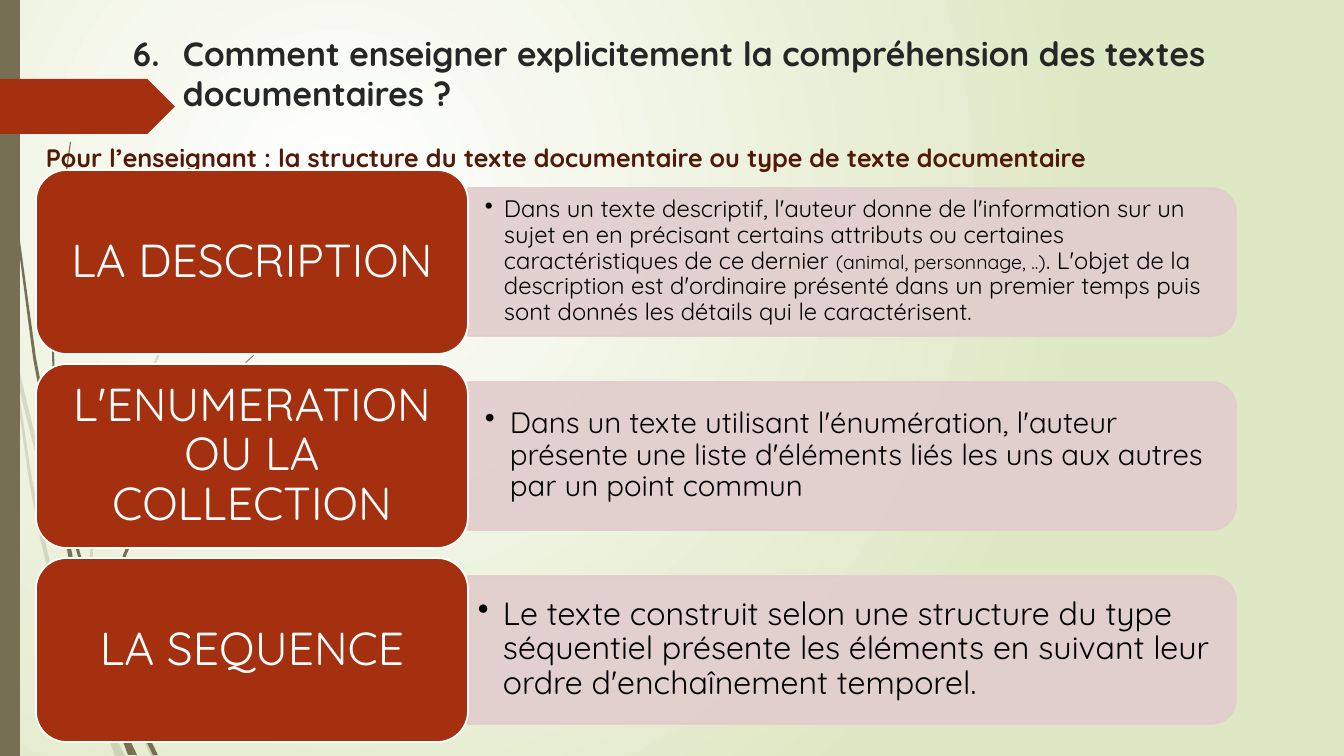
from dataclasses import dataclass

from lxml import etree
from pptx import Presentation
from pptx.dml.color import RGBColor
from pptx.enum import shapes, text
from pptx.oxml import ns
from pptx.util import Pt

WIDE, HIGH = 1344, 756
SCALE = 12192000 / WIDE


@dataclass(frozen=True)
class Theme:
    font: str = "Quicksand"
    olive: str = "766F54"
    rust: str = "A53010"
    rose: str = "E1CDCC"
    white: str = "FFFFFF"
    lime: str = "DFE8C4"
    ink: str = "262626"
    maroon: str = "521808"
    black: str = "000000"
    title: int = 24
    lead: int = 18
    label: int = 33
    edge: float = 1.25


THEME = Theme()

PALE = [
    [(11, 353), (9, 325), (0, 284), (0, 301), (10, 347)],
    [(58, 526), (85, 604), (86, 591), (62, 524), (43, 467), (28, 407),
     (14, 348), (17, 379), (29, 428), (42, 478)],
    [(93, 612), (89, 601), (89, 615), (124, 700), (151, 756), (156, 756),
     (128, 698)],
    [(120, 756), (125, 756), (106, 717)],
    [(94, 688), (71, 624), (53, 575), (41, 524), (31, 473), (17, 379),
     (11, 353), (28, 474), (37, 525), (49, 576), (66, 626), (93, 699),
     (102, 720), (100, 713)],
    [(89, 589), (96, 526), (111, 466), (161, 352), (231, 247), (270, 200),
     (292, 176), (314, 155), (314, 154), (291, 176), (270, 199), (230, 246),
     (159, 351), (108, 465), (93, 526), (86, 589), (86, 591), (89, 601)],
    [(102, 720), (115, 756), (120, 756)],
    [(97, 698), (94, 688), (100, 713), (102, 720), (120, 756), (106, 717)],
]
DARK = [
    [(7, 111), (17, 235), (33, 358), (56, 481), (57, 485), (55, 461),
     (55, 457), (36, 358), (19, 234), (8, 110), (5, 48), (4, 0), (3, 0),
     (4, 48)],
    [(89, 597), (107, 650), (107, 638), (107, 636), (94, 595), (81, 556),
     (70, 516), (60, 476), (65, 509)],
    [(114, 654), (111, 646), (112, 661), (133, 714), (153, 755), (158, 755),
     (137, 712)],
    [(111, 697), (99, 662), (73, 560), (65, 509), (57, 481), (69, 561),
     (94, 664), (112, 714), (118, 728), (117, 723)],
    [(60, 476), (58, 457), (54, 352), (58, 247), (64, 195), (71, 142),
     (70, 142), (62, 195), (56, 247), (52, 352), (55, 453)],
    [(134, 755), (137, 755), (123, 725)],
    [(112, 638), (126, 556), (159, 480), (207, 409), (233, 377), (247, 362),
     (263, 347), (262, 347), (247, 361), (233, 376), (206, 408), (157, 478),
     (123, 555), (107, 636), (111, 646)],
    [(118, 728), (128, 755), (132, 755)],
    [(117, 712), (111, 697), (117, 723), (118, 728), (131, 755), (134, 755),
     (123, 725)],
]

# Label, runs of the note with sizes, hanging indent, side inset, top inset
ROWS = [
    ("LA DESCRIPTION", [
        ("Dans un texte descriptif, l'auteur donne de l'information sur un "
         "sujet en en précisant certains attributs ou certaines "
         "caractéristiques de ce dernier ", 17),
        ("(animal, personnage, ..)", 14),
        (". L'objet de la description est d'ordinaire présenté dans un "
         "premier temps puis sont donnés les détails qui le caractérisent.",
         17)], 19, 17, 9),
    ("L'ENUMERATION OU LA COLLECTION", [
        ("Dans un texte utilisant l'énumération, l'auteur présente une liste "
         "d'éléments liés les uns aux autres par un point commun", 21)],
     25, 17, 9),
    ("LA SEQUENCE", [
        ("Le texte construit selon une structure du type séquentiel présente "
         "les éléments en suivant leur ordre d'enchaînement temporel.", 23)],
     25, 10, 5),
]


def px(n):
    return round(n * SCALE)


def rgb(code):
    return RGBColor.from_string(code)


def paint(shape, fill, line=None, alpha=100):
    shape.shadow.inherit = False
    shape.fill.solid()
    shape.fill.fore_color.rgb = rgb(fill)
    if line:
        shape.line.color.rgb = rgb(line)
        shape.line.width = Pt(THEME.edge)
    else:
        shape.line.fill.background()
    if alpha < 100:
        for tint in shape._element.spPr.iter(ns.qn("a:srgbClr")):
            etree.SubElement(tint, ns.qn("a:alpha"), val=str(alpha * 1000))


def block(slide, kind, box, *look):
    shape = slide.shapes.add_shape(kind, *map(px, box))
    paint(shape, *look)
    return shape


def place(shape, box):
    shape.left, shape.top, shape.width, shape.height = map(px, box)


def frame(shape, side, top, anchor):
    area = shape.text_frame
    area.word_wrap = True
    area.auto_size = text.MSO_AUTO_SIZE.NONE
    area.vertical_anchor = anchor
    area.margin_left = area.margin_right = px(side)
    area.margin_top = area.margin_bottom = px(top)
    return area.paragraphs[0]


def write(para, words, size, color, bold=False):
    run = para.add_run()
    run.text = words
    run.font.name = THEME.font
    run.font.size = Pt(size)
    run.font.bold = bold
    run.font.color.rgb = rgb(color)


def hang(para, indent, tag, **attrs):
    """Set the hanging indent and the bullet element of a paragraph."""
    props = para._p.get_or_add_pPr()
    props.set("marL", str(px(indent)))
    props.set("indent", str(-px(indent)))
    etree.SubElement(props, ns.qn(tag), **attrs)


def backdrop(slide):
    fill = slide.background.fill
    fill.gradient()
    for stop, code in zip(fill.gradient_stops, (THEME.white, THEME.lime)):
        stop.color.rgb = rgb(code)
    fill.gradient_stops[0].position = 0
    fill.gradient_stops[1].position = 1
    line = next(slide._element.iter(ns.qn("a:lin")))
    ring = etree.Element(ns.qn("a:path"))
    ring.set("path", "circle")
    etree.SubElement(ring, ns.qn("a:fillToRect"), l="50000", t="50000",
                     r="100000", b="100000")
    line.getparent().replace(line, ring)


def margin(slide):
    """Draw the grass blades, the side bar and the arrow tab."""
    for blades, alpha in ((PALE, 20), (DARK, 100)):
        for first, *rest in blades:
            pen = slide.shapes.build_freeform(*first, scale=SCALE)
            pen.add_line_segments(rest, close=True)
            paint(pen.convert_to_shape(), THEME.olive, None, alpha)
    kinds = shapes.MSO_SHAPE
    block(slide, kinds.RECTANGLE, (0, 0, 20, HIGH), THEME.olive)
    block(slide, kinds.PENTAGON, (0, 79, 175, 55), THEME.rust)


def heading(slide, box):
    title = slide.shapes.title
    slide.shapes._spTree.append(title._element)
    place(title, box)
    para = frame(title, 10, 5, text.MSO_ANCHOR.TOP)
    para.alignment = text.PP_ALIGN.LEFT
    hang(para, 50, "a:buAutoNum", type="arabicPeriod", startAt="6")
    write(para, "Comment enseigner explicitement la compréhension des textes "
          "documentaires ?", THEME.title, THEME.ink, True)


def lead(slide, box):
    body = slide.placeholders[1]
    slide.shapes._spTree.append(body._element)
    place(body, box)
    para = frame(body, 10, 49, text.MSO_ANCHOR.TOP)
    para.space_before = Pt(0)
    hang(para, 0, "a:buNone")
    write(para, "Pour l’enseignant : la structure du texte documentaire ou "
          "type de texte documentaire", THEME.lead, THEME.maroon, True)


def row(slide, box, label, runs, indent, side, top):
    """Draw a label card with its note panel on the right."""
    left, y, width, height = box
    card, deep, middle = 432, 148, y + height // 2
    long = width - card
    panel = block(slide, shapes.MSO_SHAPE.ROUND_2_SAME_RECTANGLE,
                  (left + card + (long - deep) // 2, middle - long // 2,
                   deep, long), THEME.rose, THEME.rose, 90)
    panel.rotation = 90

    note = slide.shapes.add_textbox(
        *map(px, (left + card, middle - 67, long - 7, 133)))
    para = frame(note, side, top, text.MSO_ANCHOR.MIDDLE)
    para.line_spacing = 0.9
    hang(para, indent, "a:buChar", char="•")
    for words, size in runs:
        write(para, words, size, THEME.black)

    tile = block(slide, shapes.MSO_SHAPE.ROUNDED_RECTANGLE,
                 (left, y, card, height), THEME.rust, THEME.white)
    para = frame(tile, 14, 7, text.MSO_ANCHOR.MIDDLE)
    para.alignment = text.PP_ALIGN.CENTER
    para.line_spacing = 0.9
    write(para, label, THEME.label, THEME.white)


def main():
    deck = Presentation()
    deck.slide_width, deck.slide_height = px(WIDE), px(HIGH)
    slide = deck.slides.add_slide(deck.slide_layouts[1])
    backdrop(slide)
    margin(slide)
    lead(slide, (36, 93, 1287, 651))
    for i, parts in enumerate(ROWS):
        row(slide, (36, 170 + 194 * i, 1200, 184), *parts)
    heading(slide, (123, 28, 1200, 96))
    deck.save("out.pptx")


if __name__ == "__main__":
    main()
